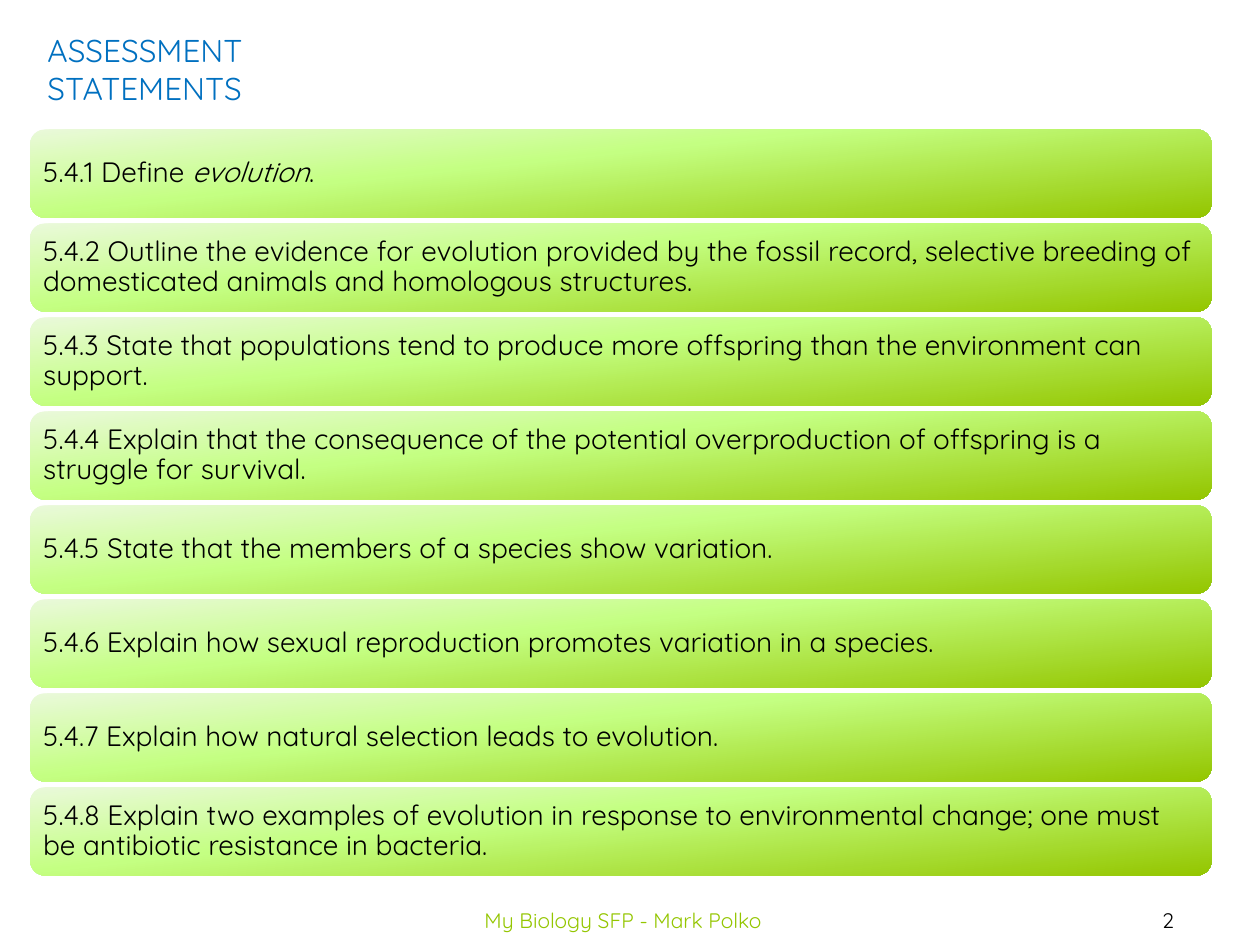
from lxml import etree
from pptx import Presentation
from pptx.dml.color import RGBColor
from pptx.enum.shapes import MSO_SHAPE
from pptx.enum.text import MSO_ANCHOR, PP_ALIGN
from pptx.oxml.ns import qn
from pptx.util import Pt

ROUNDED = MSO_SHAPE.ROUNDED_RECTANGLE
TOP, MIDDLE = MSO_ANCHOR.TOP, MSO_ANCHOR.MIDDLE
LEFT, CENTER = PP_ALIGN.LEFT, PP_ALIGN.CENTER

TITLE = "ASSESSMENT\vSTATEMENTS"
FOOTER = "My Biology SFP - Mark Polko"
PAGE = "2"
STATEMENTS = [
    [("5.4.1 Define ", False), ("evolution", True), (".", False)],
    [("5.4.2 Outline the evidence for evolution provided by the fossil record, "
      "selective breeding of domesticated animals and homologous structures.", False)],
    [("5.4.3 State that populations tend to produce more offspring than "
      "the environment can support.", False)],
    [("5.4.4 Explain that the consequence of the potential overproduction "
      "of offspring is a struggle for survival.", False)],
    [("5.4.5 State that the members of a species show variation.", False)],
    [("5.4.6 Explain how sexual reproduction promotes variation in a species.", False)],
    [("5.4.7 Explain how natural selection leads to evolution.", False)],
    [("5.4.8 Explain two examples of evolution in response to environmental "
      "change; one must be antibiotic resistance in bacteria.", False)],
]

THEME = {
    "font": "Quicksand",
    "title": "0070C0", "body": "000000", "footer": "94C600",
    "title_size": 18, "body_size": 16, "footer_size": 12,
    "gradient": [(0, "EAF9DA"), (40, "C4FF82"), (100, "94C600")],
    "angle": 84,
}

BAR_LEFT, BAR_TOP, BAR_WIDTH, BAR_HEIGHT = 17.3, 74, 675, 50.4
BAR_PITCH = 53.7
BAR_INSET = 2.4
TEXT_MARGIN = 5


def add_text(shapes, box, runs, color, size, align=LEFT, anchor=MIDDLE):
    tb = shapes.add_textbox(*map(Pt, box))
    tf = tb.text_frame
    tf.word_wrap = True
    tf.vertical_anchor = anchor
    p = tf.paragraphs[0]
    p.alignment = align
    for text, italic in runs:
        for i, line in enumerate(text.split("\v")):
            if i:
                p.add_line_break()
            r = p.add_run()
            r.text = line
            r.font.name = THEME["font"]
            r.font.size = Pt(THEME[size])
            r.font.color.rgb = RGBColor.from_string(THEME[color])
            r.font.italic = italic
    return tf


def set_gradient(sp):
    sp.fill.gradient()
    grad = sp.fill._xPr.find(qn("a:gradFill"))
    stops = grad.find(qn("a:gsLst"))
    for stop in list(stops):
        stops.remove(stop)
    for pos, color in THEME["gradient"]:
        stop = etree.SubElement(stops, qn("a:gs"), pos=str(pos * 1000))
        etree.SubElement(stop, qn("a:srgbClr"), val=color)
    lin = grad.find(qn("a:lin"))
    lin.set("ang", str(THEME["angle"] * 60000))
    lin.set("scaled", "0")


def add_bar(shapes, top, runs):
    sp = shapes.add_shape(ROUNDED, Pt(BAR_LEFT), Pt(top), Pt(BAR_WIDTH), Pt(BAR_HEIGHT))
    sp.shadow.inherit = False
    sp.line.fill.background()
    set_gradient(sp)
    box = (BAR_LEFT + BAR_INSET, top + BAR_INSET,
           BAR_WIDTH - 2 * BAR_INSET, BAR_HEIGHT - 2 * BAR_INSET)
    tf = add_text(shapes, box, runs, "body", "body_size")
    tf.margin_left = tf.margin_right = Pt(TEXT_MARGIN)
    tf.margin_top = tf.margin_bottom = Pt(TEXT_MARGIN)
    tf.paragraphs[0].line_spacing = 0.9


def main():
    prs = Presentation()
    prs.slide_width, prs.slide_height = Pt(720), Pt(540)
    s = prs.slides.add_slide(prs.slide_layouts[6])
    add_text(s.shapes, (615, 511, 105, 29), [(PAGE, False)],
             "body", "footer_size", CENTER)
    add_text(s.shapes, (218, 511, 276, 29), [(FOOTER, False)],
             "footer", "footer_size", CENTER)
    add_text(s.shapes, (20, 14.4, 231, 29), [(TITLE, False)],
             "title", "title_size", anchor=TOP)
    group = s.shapes.add_group_shape()
    for i, runs in enumerate(STATEMENTS):
        add_bar(group.shapes, BAR_TOP + i * BAR_PITCH, runs)
    prs.save("out.pptx")


if __name__ == "__main__":
    main()
